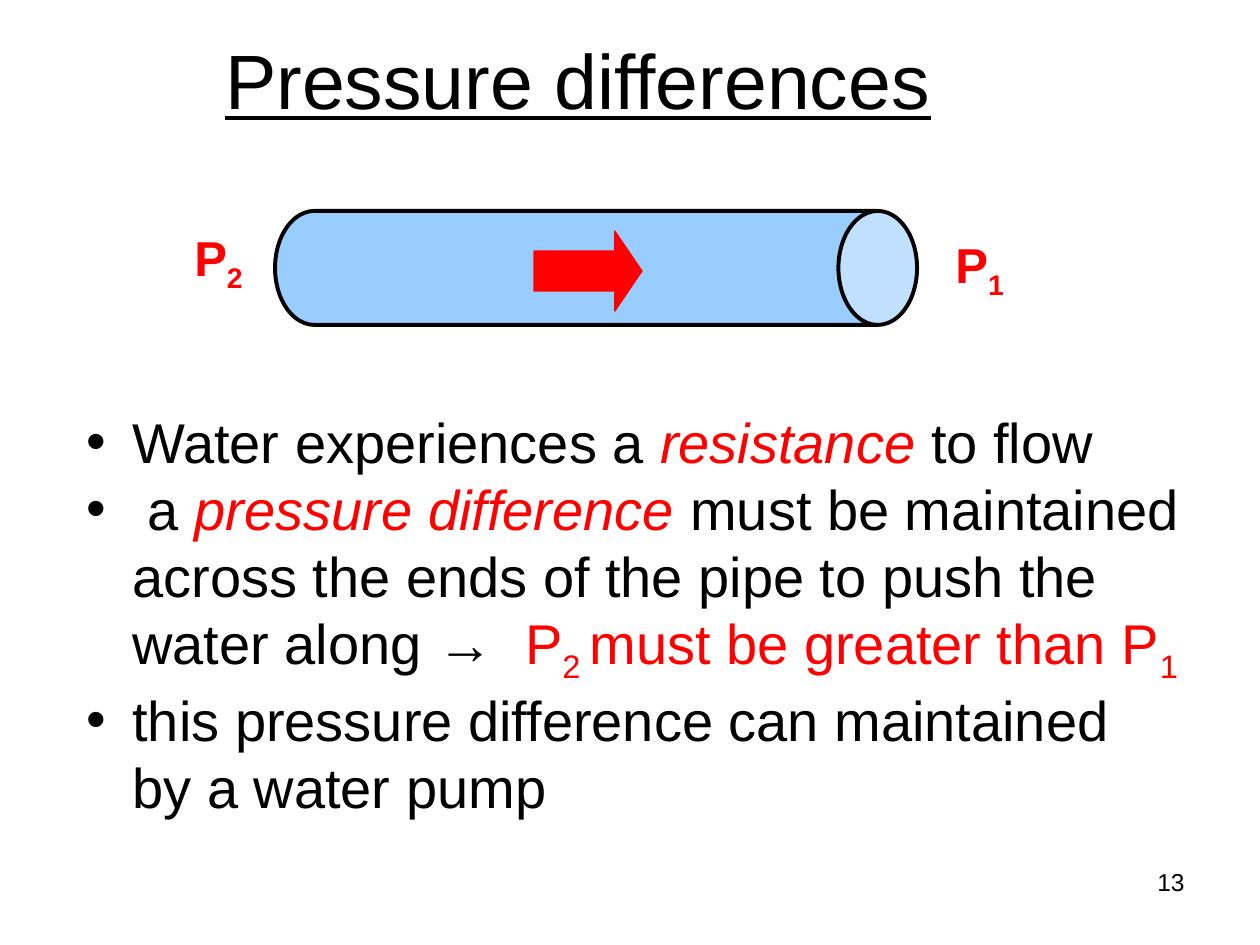
from lxml import etree
from pptx import Presentation
from pptx.dml.color import RGBColor
from pptx.enum.shapes import MSO_SHAPE
from pptx.enum.text import MSO_ANCHOR, PP_ALIGN
from pptx.oxml.ns import qn
from pptx.util import Pt

CAN, RIGHT_ARROW = MSO_SHAPE.CAN, MSO_SHAPE.RIGHT_ARROW
TOP, MIDDLE = MSO_ANCHOR.TOP, MSO_ANCHOR.MIDDLE
LEFT, CENTER, RIGHT = PP_ALIGN.LEFT, PP_ALIGN.CENTER, PP_ALIGN.RIGHT
EMU_PER_PX = 914400 / 126
BLACK, RED, WATER = "000000", "FF0000", "99CCFF"
EMPHASIS = {"color": RED, "italic": True}
WARNING = {"color": RED}
SUBSCRIPT = {"color": RED, "baseline": -25000}


def px(length):
    return round(length * EMU_PER_PX)


def color(value):
    return RGBColor.from_string(value)


class SlideBuilder:
    font = "Arial"
    bullet_indent = 46

    def __init__(self, slide):
        self.slide = slide

    def shape(self, kind, box, fill, line, width, adjustments, rotation=0):
        shape = self.slide.shapes.add_shape(kind, *map(px, box))
        shape.shadow.inherit = False
        shape.rotation = rotation
        shape.fill.solid()
        shape.fill.fore_color.rgb = color(fill)
        shape.line.color.rgb = color(line)
        shape.line.width = Pt(width)
        for index, value in enumerate(adjustments):
            shape.adjustments[index] = value

    def text(self, box, paragraphs, align=LEFT, anchor=TOP, wrap=True,
             bullets=False, **style):
        frame = self.slide.shapes.add_textbox(*map(px, box)).text_frame
        frame.word_wrap = wrap
        frame.vertical_anchor = anchor
        for index, runs in enumerate(paragraphs):
            paragraph = frame.add_paragraph() if index else frame.paragraphs[0]
            paragraph.alignment = align
            if bullets:
                self.bullet(paragraph)
            for words, changes in runs:
                self.run(paragraph, words, {**style, **changes})

    def run(self, paragraph, words, style):
        run = paragraph.add_run()
        run.text = words
        values = dict(style)
        run.font.color.rgb = color(values.pop("color", BLACK))
        baseline = values.pop("baseline", 0)
        values["size"] = Pt(values["size"])
        values["name"] = self.font
        for name, value in values.items():
            setattr(run.font, name, value)
        if baseline:
            run.font._element.set("baseline", str(baseline))

    def bullet(self, paragraph):
        properties = paragraph._p.get_or_add_pPr()
        properties.set("marL", str(px(self.bullet_indent)))
        properties.set("indent", str(-px(self.bullet_indent)))
        etree.SubElement(properties, qn("a:buFont"), typeface=self.font)
        etree.SubElement(properties, qn("a:buChar"), char="•")

    def pressure_label(self, left, top, number):
        self.text((left, top, 77, 72), [[("P", {}), (number, SUBSCRIPT)]],
                  wrap=False, size=28, bold=True, color=RED)


def main():
    presentation = Presentation()
    presentation.slide_width = px(1260)
    presentation.slide_height = px(945)
    builder = SlideBuilder(
        presentation.slides.add_slide(presentation.slide_layouts[6]))

    builder.text((11, 0, 1134, 158), [[("Pressure differences", {})]],
                 align=CENTER, anchor=MIDDLE, size=44, underline=True)

    builder.shape(CAN, (539, -53, 114, 642), WATER, BLACK, 2.25, [0.69],
                  rotation=90)
    builder.shape(RIGHT_ARROW, (534, 231, 108, 80), RED, RED, 0.75, [0.5, 0.34])
    builder.pressure_label(182, 221, "2")
    builder.pressure_label(943, 228, "1")

    builder.text((74, 401, 1126, 462), [
        [("Water experiences a ", {}), ("resistance", EMPHASIS),
         (" to flow", {})],
        [(" a ", {}), ("pressure difference ", EMPHASIS),
         ("must be maintained across the ends of the pipe to push the "
          "water along →  ", {}),
         ("P", WARNING), ("2 ", SUBSCRIPT),
         ("must be greater than P", WARNING), ("1", SUBSCRIPT)],
        [("this pressure difference can maintained  by a water pump", {})],
    ], bullets=True, size=32)

    builder.text((903, 861, 294, 66), [[("13", {})]], align=RIGHT, size=14)
    presentation.save("out.pptx")


if __name__ == "__main__":
    main()
